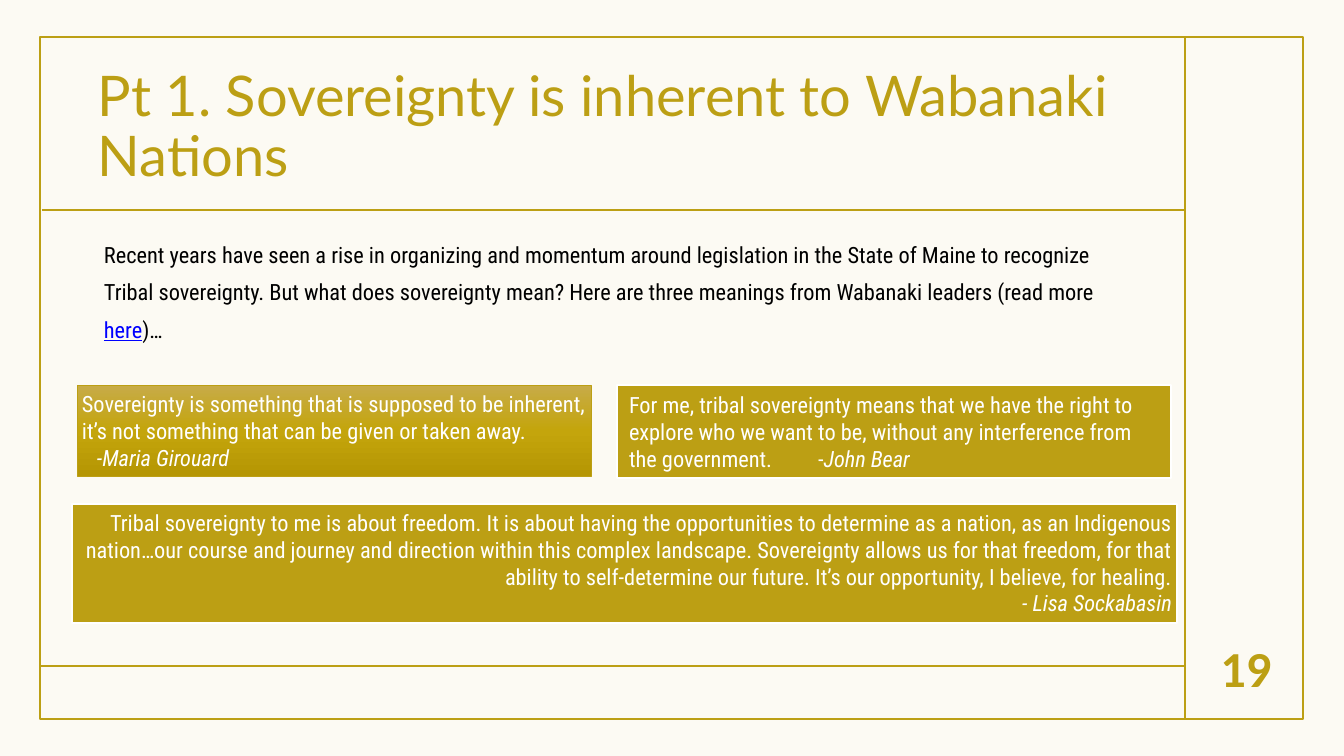
from lxml.etree import SubElement
from pptx import Presentation
from pptx.dml.color import RGBColor
from pptx.enum.shapes import MSO_CONNECTOR, MSO_SHAPE
from pptx.enum.text import MSO_ANCHOR, PP_ALIGN
from pptx.oxml import parse_xml
from pptx.oxml.ns import nsdecls, qn
from pptx.util import Pt

PX = 914400 / 100.8
GOLD, WHITE, CREAM, BLACK, BLUE = "BC9F14", "FFFFFF", "FCFAF3", "000000", "0000FF"
GRADIENT = [(0, "C7AB48"), (50, "C4A50C"), (100, "B59603")]
BODY = {"name": "Roboto Condensed", "size": Pt(16)}
ITALIC = {"italic": True}


def px(*lengths):
    return [round(length * PX) for length in lengths]


def color(value):
    return RGBColor.from_string(value)


def write(shape, paragraphs, look, ink, anchor=MSO_ANCHOR.TOP, wrap=True):
    """Fill a shape with paragraphs, each a (spans, layout) pair."""
    frame = shape.text_frame
    frame.word_wrap = wrap
    frame.vertical_anchor = anchor
    for side in ("left", "top", "right", "bottom"):
        setattr(frame, f"margin_{side}", px(5)[0])
    for index, (spans, layout) in enumerate(paragraphs):
        para = frame.paragraphs[0] if index == 0 else frame.add_paragraph()
        para.alignment = layout.get("align", PP_ALIGN.LEFT)
        para.line_spacing = layout.get("spacing", 1.0)
        properties = para._p.get_or_add_pPr()
        if "indent" in layout:
            properties.set("marL", str(px(layout["indent"])[0]))
        if "tab" in layout:
            tabs = SubElement(properties, qn("a:tabLst"))
            SubElement(tabs, qn("a:tab"), pos=str(px(layout["tab"])[0]), algn="l")
        for text, extra in spans:
            span = para.add_run()
            span.text = text
            formats = {**look, **extra}
            span.font.color.rgb = color(formats.pop("ink", ink))
            for name, value in formats.items():
                setattr(span.font, name, value)


def add_text(page, box, *args, **kwargs):
    write(page.shapes.add_textbox(*px(*box)), *args, **kwargs)


def add_box(page, box, fill, line, width):
    shape = page.shapes.add_shape(MSO_SHAPE.RECTANGLE, *px(*box))
    shape.shadow.inherit = False
    if fill:
        shape.fill.solid()
        shape.fill.fore_color.rgb = color(fill)
    else:
        shape.fill.background()
    shape.line.color.rgb = color(line)
    shape.line.width = Pt(width)
    return shape


def shade(shape, stops):
    """Replace the solid fill with a gradient running from top to bottom."""
    steps = "".join(
        f'<a:gs pos="{place * 1000}"><a:srgbClr val="{value}"/></a:gs>'
        for place, value in stops
    )
    gradient = parse_xml(
        f'<a:gradFill {nsdecls("a")} rotWithShape="1"><a:gsLst>{steps}</a:gsLst>'
        '<a:lin ang="5400000" scaled="0"/></a:gradFill>'
    )
    properties = shape._element.spPr
    properties.replace(properties.find(qn("a:solidFill")), gradient)


def add_frame(page, box):
    left, top, width, height = box
    add_box(page, box, None, GOLD, 1)
    divider = left + 1145
    rules = [
        (divider, top, divider, top + height),
        (left, top + 629, divider, top + 629),
        (left + 2, top + 173, divider, top + 173),
    ]
    for ends in rules:
        rule = page.shapes.add_connector(MSO_CONNECTOR.STRAIGHT, *px(*ends))
        rule.line.color.rgb = color(GOLD)
        rule.line.width = Pt(1)
        SubElement(rule._element.spPr, qn("a:effectLst"))


def add_heading(page, box):
    title = "Pt 1. Sovereignty is inherent to Wabanaki Nations"
    add_text(page, box, [([(title, {})], {"spacing": 0.9})],
             {"name": "Lato", "size": Pt(40)}, GOLD, anchor=MSO_ANCHOR.MIDDLE)


def add_introduction(page, box):
    spans = [
        ("Recent years have seen a rise in organizing and momentum around legislation "
         "in the State of Maine to recognize Tribal sovereignty. But what does sovereignty "
         "mean? Here are three meanings from Wabanaki leaders (read more ", {}),
        ("here", {"ink": BLUE, "underline": True}),
        (")…", {}),
    ]
    add_text(page, box, [(spans, {"spacing": 1.4})], BODY, BLACK)


def add_page_number(page, box):
    add_text(page, box, [([("19", {})], {"align": PP_ALIGN.CENTER})],
             {"name": "Calibri", "size": Pt(36), "bold": True}, GOLD,
             anchor=MSO_ANCHOR.MIDDLE, wrap=False)


def add_quotes(page, box):
    left, top, width, height = box

    add_box(page, (left + 545, top, 554, 93), GOLD, WHITE, 1.5)
    bear = [
        ("For me, tribal sovereignty means that we have the right to explore who we want "
         "to be, without any interference from the government.\t-", {}),
        ("John Bear", ITALIC),
    ]
    add_text(page, (left + 552, top + 1, 540, 91), [(bear, {"tab": 189})], BODY, WHITE)

    girouard = add_box(page, (left + 5, top, 514, 91), GOLD, GOLD, 0.5)
    shade(girouard, GRADIENT)
    write(girouard, [
        ([("Sovereignty is something that is supposed to be inherent, it’s not something "
           "that can be given or taken away.", {})], {}),
        ([("-Maria Girouard", ITALIC)], {"indent": 15}),
    ], BODY, WHITE)

    sockabasin = add_box(page, (left, top + height - 119, width, 119), GOLD, WHITE, 1.5)
    right = {"align": PP_ALIGN.RIGHT}
    write(sockabasin, [
        ([("Tribal sovereignty to me is about freedom. It is about having the opportunities "
           "to determine as a nation, as an Indigenous nation…our course and journey and "
           "direction within this complex landscape. Sovereignty allows us for that freedom, "
           "for that ability to self-determine our future. It’s our opportunity, I believe, "
           "for healing.", {})], right),
        ([("- Lisa Sockabasin", ITALIC)], right),
    ], BODY, WHITE)


def main():
    deck = Presentation()
    deck.slide_width, deck.slide_height = px(1344, 756)
    page = deck.slides.add_slide(deck.slide_layouts[6])
    page.background.fill.solid()
    page.background.fill.fore_color.rgb = color(CREAM)
    add_frame(page, (40, 37, 1263, 682))
    add_heading(page, (93, 60, 1050, 137))
    add_introduction(page, (99, 225, 1050, 149))
    add_page_number(page, (1212, 632, 68, 71))
    add_quotes(page, (72, 385, 1105, 238))
    deck.save("out.pptx")


if __name__ == "__main__":
    main()
